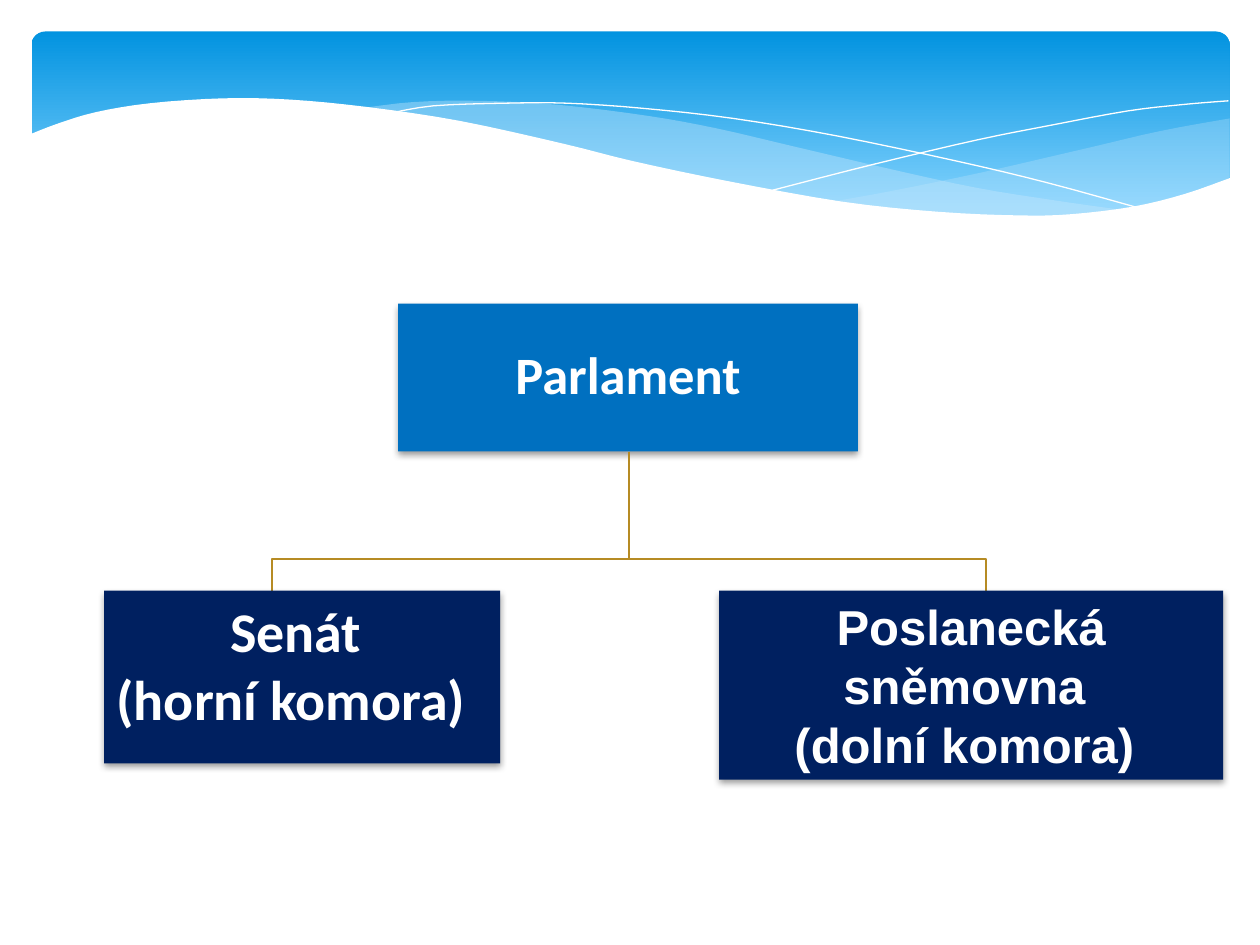
from lxml import etree
from pptx import Presentation
from pptx import util as u
from pptx.dml.color import RGBColor
from pptx.enum import shapes, text
from pptx.oxml.ns import qn

Pt = u.Pt
CENTER = text.PP_ALIGN.CENTER
LEFT = text.PP_ALIGN.LEFT

RIGHT_WAVE_TOP = [(702.7, 67.7), (663.1, 74.9), (619.9, 85), (560.9, 98.6),
                  (508.3, 109.4), (475.9, 115.2)]
RIGHT_WAVE_BOTTOM = [(475.9, 115.2), (507.6, 118.8), (545, 122.4), (578.2, 123.8),
                     (607.7, 123.1), (634.3, 120.2), (663.1, 115.2), (683.3, 109.4),
                     (702.7, 101.5)]
MIDDLE_WAVE_TOP = [(643, 120.2), (602.6, 114.5), (558, 107.3), (508.3, 96.5),
                   (452.9, 83.5), (409.7, 73.4), (370.1, 66.2), (318.2, 59.8),
                   (273.6, 57.6), (236.2, 58.3), (205.9, 61.9)]
MIDDLE_WAVE_BOTTOM = [(205.9, 61.9), (246.2, 67.7), (290.9, 76.3), (353.5, 90.7),
                      (407.5, 103), (468, 113.8), (519.8, 121), (565.2, 123.8),
                      (596.2, 124.6), (624.2, 122.4), (643, 120.2)]
FALLING_LINE = [(222.5, 64.8), (247.7, 60.5), (288.7, 59), (324, 59), (367.2, 61.9),
                (419, 67.7), (478.8, 77.8), (547.2, 92.2), (598.3, 104.4), (653, 119.5)]
RISING_LINE = [(441.4, 108.7), (500.4, 93.6), (558.7, 79.9), (601.9, 71.3),
               (644.4, 63.4), (675.4, 59.8), (702, 57.6)]
WHITE_WAVE = [(703.4, 101.5), (676.8, 110.9), (647.3, 118.1), (612, 122.4),
              (582.5, 123.1), (535.7, 121), (481, 115.2), (416.9, 103.7),
              (362.2, 92.2), (321.8, 82.1), (262.8, 69.1), (210.2, 61.2),
              (165.6, 56.9), (127.4, 56.2), (85.7, 59), (54.7, 64.1),
              (33.1, 70.6), (16.6, 77)]
WHITE_CORNERS = [(16.6, 161), (703.4, 161)]


def color(value):
    return RGBColor.from_string(value)


def smooth(points, steps=4):
    padded = [points[0], *points, points[-1]]
    curve = []
    for a, b, c, d in zip(padded, padded[1:], padded[2:], padded[3:]):
        for step in range(steps):
            t = step / steps
            curve.append(tuple(
                (2 * q + (r - p) * t + (2 * p - 5 * q + 4 * r - s) * t ** 2
                 + (3 * q - p - 3 * r + s) * t ** 3) / 2
                for p, q, r, s in zip(a, b, c, d)))
    return curve + [points[-1]]


def add_outline(slide, points, fill=None, opacity=100, line=None, width=0):
    vertices = [(Pt(x), Pt(y)) for x, y in points]
    builder = slide.shapes.build_freeform(*vertices[0])
    builder.add_line_segments(vertices[1:], close=fill is not None)
    shape = builder.convert_to_shape()
    shape.shadow.inherit = False
    if fill:
        shape.fill.solid()
        shape.fill.fore_color.rgb = color(fill)
        tint = shape.fill._xPr.find(".//" + qn("a:srgbClr"))
        if opacity < 100:
            etree.SubElement(tint, qn("a:alpha"), val=str(opacity * 1000))
    else:
        shape.fill.background()
    if line:
        shape.line.color.rgb = color(line)
        shape.line.width = Pt(width)
    else:
        shape.line.fill.background()


def add_banner(slide):
    shape = slide.shapes.add_shape(shapes.MSO_SHAPE.ROUNDED_RECTANGLE,
                                   Pt(18), Pt(18), Pt(684.7), Pt(112.3))
    shape.adjustments[0] = 0.07
    shape.shadow.inherit = False
    shape.line.fill.background()
    shape.fill.gradient()
    shape.fill.gradient_angle = 270
    stops = [(0, "0293E0"), (0.9, "83D3FE")]
    for stop, (position, value) in zip(shape.fill.gradient_stops, stops):
        stop.position = position
        stop.color.rgb = color(value)


def add_shadow(shape):
    shape.shadow.inherit = False
    effects = shape._element.spPr.find(qn("a:effectLst"))
    shadow = etree.SubElement(effects, qn("a:outerShdw"), blurRad=str(Pt(4)),
                              dist=str(Pt(2)), dir="5400000", rotWithShape="0")
    tint = etree.SubElement(shadow, qn("a:srgbClr"), val="000000")
    etree.SubElement(tint, qn("a:alpha"), val="38000")


def add_box(slide, left, top, width, height, fill):
    shape = slide.shapes.add_shape(shapes.MSO_SHAPE.RECTANGLE,
                                   Pt(left), Pt(top), Pt(width), Pt(height))
    shape.fill.solid()
    shape.fill.fore_color.rgb = color(fill)
    shape.line.fill.background()
    add_shadow(shape)
    return shape


def write(shape, content, size, font="Calibri", aligns=(CENTER,), spacing=None,
          anchor=text.MSO_ANCHOR.TOP):
    frame = shape.text_frame
    frame.word_wrap = True
    frame.vertical_anchor = anchor
    frame.text = content
    for paragraph, align in zip(frame.paragraphs, aligns):
        paragraph.alignment = align
        paragraph.line_spacing = spacing
        run_font = paragraph.runs[0].font
        run_font.name = font
        run_font.size = Pt(size)
        run_font.bold = True
        run_font.color.rgb = color("FFFFFF")


def add_waves(slide):
    add_outline(slide, smooth(RIGHT_WAVE_TOP) + smooth(RIGHT_WAVE_BOTTOM),
                fill="C6E7FC", opacity=29)
    add_outline(slide, smooth(MIDDLE_WAVE_TOP) + smooth(MIDDLE_WAVE_BOTTOM),
                fill="C6E7FC", opacity=40)
    for points in (FALLING_LINE, RISING_LINE):
        add_outline(slide, smooth(points), line="FFFFFF")
    add_outline(slide, smooth(WHITE_WAVE) + WHITE_CORNERS, fill="FFFFFF")


def add_branches(slide, center, top, bend, bottom, reach):
    for end in (center + reach, center - reach):
        add_outline(slide, [(center, top), (center, bend), (end, bend), (end, bottom)],
                    line="B68B24", width=1.25)


def main():
    presentation = Presentation()
    presentation.slide_width, presentation.slide_height = Pt(720), Pt(540)
    slide = presentation.slides.add_slide(presentation.slide_layouts[6])
    add_banner(slide)
    add_waves(slide)

    parliament = add_box(slide, 227.5, 173.5, 262.8, 84.5, "0070C0")
    write(parliament, "Parlament", 30, spacing=0.9, anchor=text.MSO_ANCHOR.MIDDLE)
    add_branches(slide, center=359.5, top=258, bend=319.5, bottom=337.5, reach=204)
    senate = add_box(slide, 59.5, 337.5, 226.3, 98.8, "002060")
    write(senate, "Senát \n(horní komora)", 32, aligns=(CENTER, LEFT))
    chamber = add_box(slide, 411, 337.5, 288, 108, "002060")
    write(chamber, "Poslanecká sněmovna \n(dolní komora) ", 28, font="Arial",
          aligns=(CENTER, CENTER))
    presentation.save("out.pptx")


if __name__ == "__main__":
    main()
